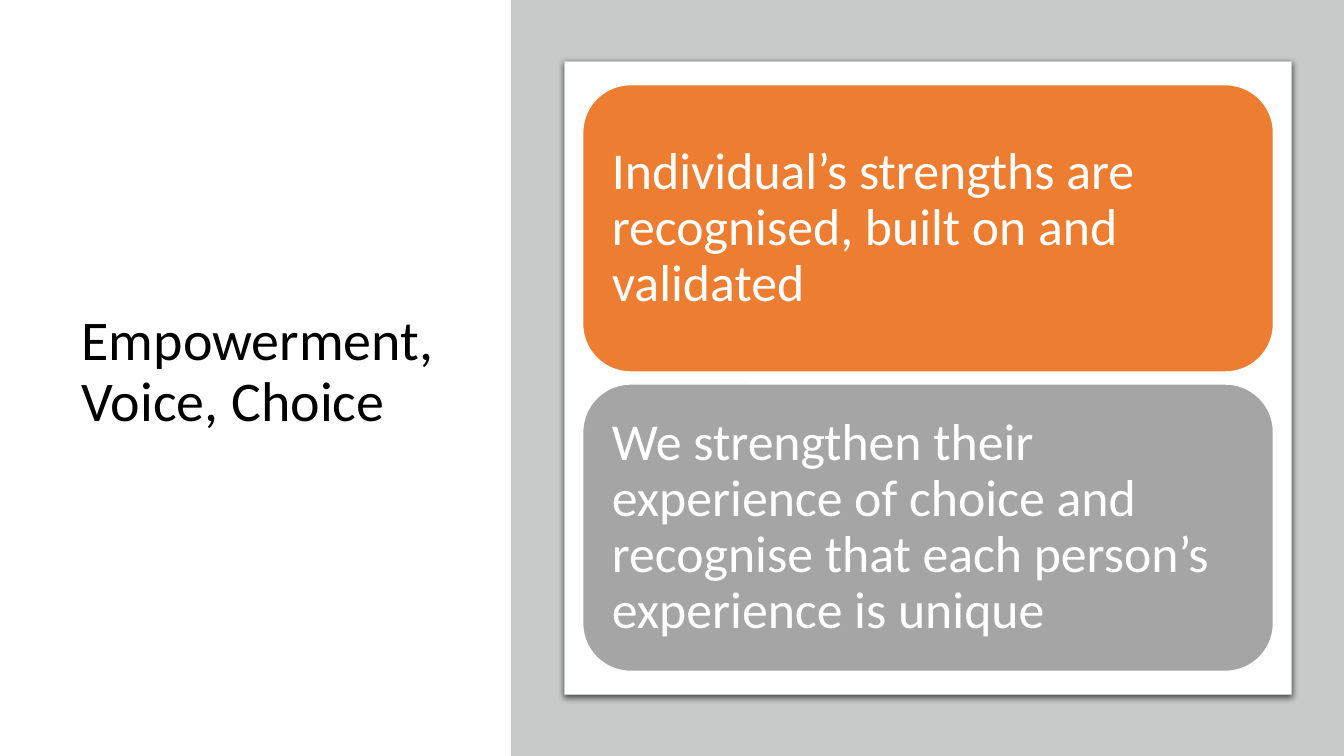
"""Build the slide on empowerment, voice and choice."""
from dataclasses import dataclass

from lxml.etree import SubElement
from pptx import Presentation
from pptx.dml.color import RGBColor
from pptx.enum.shapes import MSO_SHAPE as Preset
from pptx.enum.text import MSO_ANCHOR as Anchor, PP_ALIGN as Align
from pptx.oxml.ns import qn
from pptx.shapes.autoshape import Shape
from pptx.slide import Slide
from pptx.util import Inches, Pt

WIDTH, HEIGHT = Inches(13.33), Inches(7.5)
COLUMN, ROW = WIDTH / 100, HEIGHT / 100
FONT = "Calibri"
WHITE, BLACK, PANEL_GREY = "FFFFFF", "000000", "C8CACA"


@dataclass(frozen=True)
class Area:
    """Place on a grid of 100 columns by 100 rows."""
    column: float
    row: float
    columns: float
    rows: float

    def box(self) -> tuple[int, int, int, int]:
        """Return left, top, width and height in slide units."""
        return (round(self.column * COLUMN), round(self.row * ROW),
                round(self.columns * COLUMN), round(self.rows * ROW))


@dataclass(frozen=True)
class Principle:
    """One statement and the colour of its tile."""
    wording: str
    colour: str


TITLE = Area(5.33, 9.2, 30.08, 80.27)
PANEL = Area(38.03, 0, 61.97, 100)
CARD = Area(42.01, 8.13, 54.09, 83.73)
FIRST_TILE = Area(43.36, 11.2, 51.39, 38)
TILE_PITCH = 39.6
PRINCIPLES = (
    Principle("Individual’s strengths are recognised, built on and validated", "ED7D31"),
    Principle("We strengthen their experience of choice and recognise that "
              "each person’s experience is unique", "A5A5A5"),
)


def colour(code: str) -> RGBColor:
    """Turn a hex string into a colour."""
    return RGBColor.from_string(code)


def write(holder: Shape, wording: str, size: float, ink: str, inset: float) -> None:
    """Set left-aligned, vertically centred text."""
    frame = holder.text_frame
    frame.word_wrap = True
    frame.vertical_anchor = Anchor.MIDDLE
    frame.margin_left = frame.margin_right = Inches(inset)
    frame.margin_top = frame.margin_bottom = Inches(min(inset, 0.15))
    paragraph = frame.paragraphs[0]
    paragraph.alignment = Align.LEFT
    paragraph.line_spacing = 0.9
    run = paragraph.add_run()
    run.text = wording
    run.font.name = FONT
    run.font.size = Pt(size)
    run.font.color.rgb = colour(ink)


def add_block(slide: Slide, preset: Preset, area: Area, fill: str,
              outline: str | None = None, weight: float = 1) -> Shape:
    """Draw a filled shape without a shadow."""
    block = slide.shapes.add_shape(preset, *area.box())
    block.shadow.inherit = False
    block.fill.solid()
    block.fill.fore_color.rgb = colour(fill)
    if outline:
        block.line.color.rgb = colour(outline)
        block.line.width = Pt(weight)
    else:
        block.line.fill.background()
    return block


def cast_shadow(block: Shape) -> None:
    """Give a shape a soft shadow straight below it."""
    effects = block.element.spPr.find(qn("a:effectLst"))
    shadow = SubElement(effects, qn("a:outerShdw"), blurRad=str(Pt(4.5)),
                        dist=str(Pt(1.5)), dir="5400000", algn="ctr", rotWithShape="0")
    tint = SubElement(shadow, qn("a:srgbClr"), val=BLACK)
    SubElement(tint, qn("a:alpha"), val="63000")


def main() -> None:
    """Compose and save the slide."""
    deck = Presentation()
    deck.slide_width, deck.slide_height = WIDTH, HEIGHT
    slide = deck.slides.add_slide(deck.slide_layouts[6])

    heading = slide.shapes.add_textbox(*TITLE.box())
    write(heading, "Empowerment, Voice, Choice", 40, BLACK, 0.1)

    add_block(slide, Preset.RECTANGLE, PANEL, PANEL_GREY)
    card = add_block(slide, Preset.ROUNDED_RECTANGLE, CARD, WHITE, PANEL_GREY, 0.75)
    card.adjustments[0] = 0
    cast_shadow(card)

    for index, principle in enumerate(PRINCIPLES):
        area = Area(FIRST_TILE.column, FIRST_TILE.row + index * TILE_PITCH,
                    FIRST_TILE.columns, FIRST_TILE.rows)
        tile = add_block(slide, Preset.ROUNDED_RECTANGLE, area, principle.colour, WHITE)
        write(tile, principle.wording, 37, WHITE, 0.15)

    deck.save("out.pptx")


if __name__ == "__main__":
    main()
